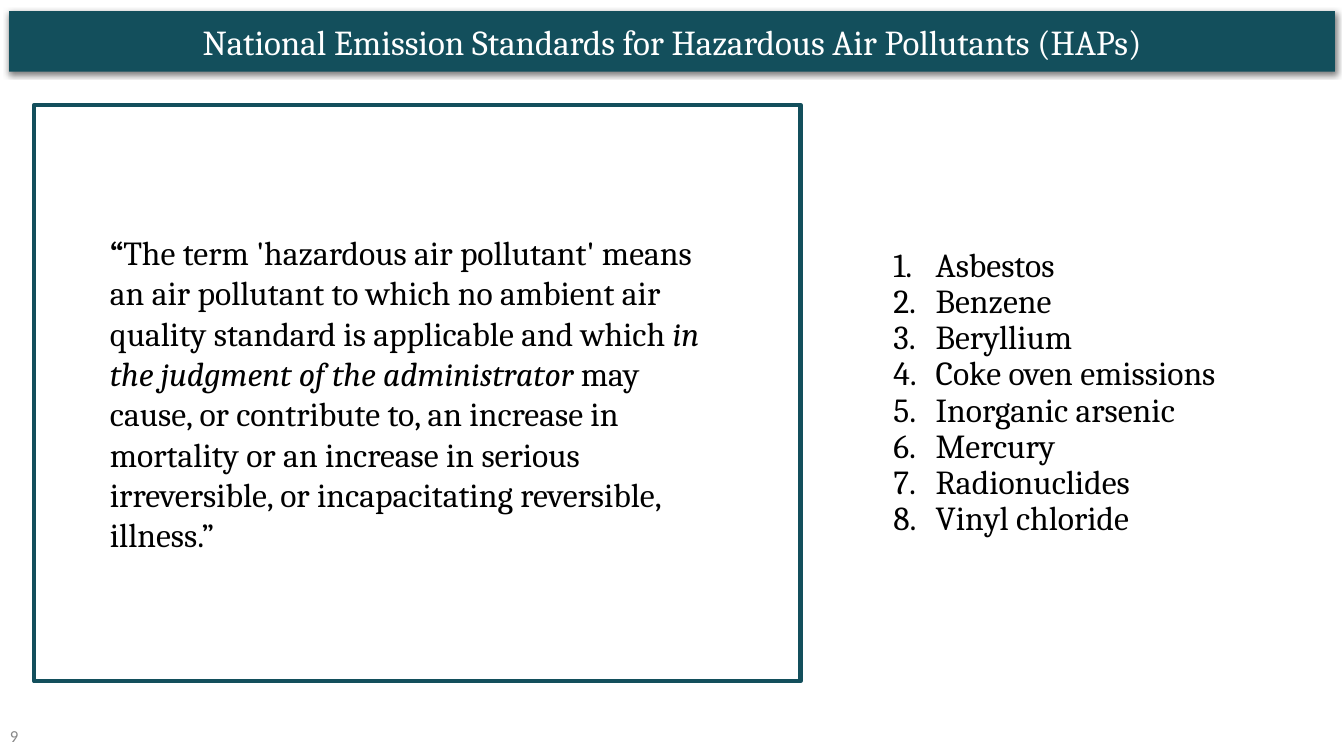
from lxml.etree import SubElement
from pptx import Presentation
from pptx.dml.color import RGBColor
from pptx.enum.text import MSO_ANCHOR, MSO_AUTO_SIZE, PP_ALIGN
from pptx.oxml import parse_xml
from pptx.oxml.ns import nsdecls, qn
from pptx.util import Inches, Pt

COLORS = {"teal": "134F5C", "white": "FFFFFF", "black": "000000", "gray": "888888"}

TITLE = "National Emission Standards for Hazardous Air Pollutants (HAPs)"
DEFINITION = [
    ("“", {"bold": True}),
    ("The term 'hazardous air pollutant' means an air pollutant to which no "
     "ambient air quality standard is applicable and which ", {}),
    ("in the judgment of the administrator", {"italic": True}),
    (" may cause, or contribute to, an increase in mortality or an increase in "
     "serious irreversible, or incapacitating reversible, illness.”", {}),
]
POLLUTANTS = ["Asbestos", "Benzene", "Beryllium", "Coke oven emissions",
              "Inorganic arsenic", "Mercury", "Radionuclides", "Vinyl chloride"]
PAGE = "9"

BOXES = {
    "title": (0.09, 0.11, 13.15, 0.6),
    "definition": (0.34, 1.04, 7.6, 5.72),
    "pollutants": (8.68, 1.04, 4.26, 5.72),
    "page": (0, 7.1, 3, 0.4),
}


def rgb(name):
    return RGBColor.from_string(COLORS[name])


def place(sp, box, side=0.1, top=0.1):
    """Position a shape, set its insets and return its text frame."""
    for attr, value in zip(("left", "top", "width", "height"), BOXES[box]):
        setattr(sp, attr, Inches(value))
    tf = sp.text_frame
    settings = {
        "word_wrap": True, "auto_size": MSO_AUTO_SIZE.NONE,
        "vertical_anchor": MSO_ANCHOR.MIDDLE,
        "margin_left": Inches(side), "margin_right": Inches(side),
        "margin_top": Inches(top), "margin_bottom": Inches(top),
    }
    for attr, value in settings.items():
        setattr(tf, attr, value)
    return tf


def add_run(p, text, size, color, name="Cambria", **style):
    r = p.add_run()
    r.text = text
    for attr, value in {"size": Pt(size), "name": name, **style}.items():
        setattr(r.font, attr, value)
    r.font.color.rgb = rgb(color)


def set_list_format(p, numbered):
    pPr = p._p.get_or_add_pPr()
    left, indent = (0.5, -0.42) if numbered else (0, 0)
    pPr.set("marL", str(Inches(left)))
    pPr.set("indent", str(Inches(indent)))
    if numbered:
        color = SubElement(pPr, qn("a:buClr"))
        SubElement(color, qn("a:srgbClr"), val=COLORS["black"])
        SubElement(pPr, qn("a:buFont"), typeface="Cambria")
        SubElement(pPr, qn("a:buAutoNum"), type="arabicPeriod")
    else:
        SubElement(pPr, qn("a:buNone"))
    p.space_before = Pt(0)


def add_shadow(sp):
    sp._element.spPr.append(parse_xml(
        f'<a:effectLst {nsdecls("a")}>'
        f'<a:outerShdw blurRad="{Pt(4.5)}" dist="{Pt(1.5)}" dir="5400000" '
        f'algn="bl" rotWithShape="0"><a:srgbClr val="{COLORS["black"]}">'
        '<a:alpha val="50000"/></a:srgbClr></a:outerShdw></a:effectLst>'))


prs = Presentation()
prs.slide_width, prs.slide_height = Inches(13.33), Inches(7.5)
s = prs.slides.add_slide(prs.slide_layouts[3])
title, definition, pollutants = s.placeholders

p = place(title, "title").paragraphs[0]
title.fill.solid()
title.fill.fore_color.rgb = rgb("teal")
title.line.fill.background()
add_shadow(title)
p.alignment = PP_ALIGN.CENTER
add_run(p, TITLE, 25, "white")

p = place(definition, "definition", side=0.75).paragraphs[0]
definition.line.color.rgb = rgb("teal")
definition.line.width = Pt(3)
set_list_format(p, numbered=False)
for text, style in DEFINITION:
    add_run(p, text, 24, "black", **style)

tf = place(pollutants, "pollutants", top=0.05)
for i, pollutant in enumerate(POLLUTANTS):
    p = tf.add_paragraph() if i else tf.paragraphs[0]
    set_list_format(p, numbered=True)
    p.line_spacing = 0.9
    add_run(p, pollutant, 24, "black")

page = s.shapes.add_textbox(0, 0, 0, 0)
p = place(page, "page", top=0.05).paragraphs[0]
add_run(p, PAGE, 12, "gray", name="Calibri")

prs.save("out.pptx")
